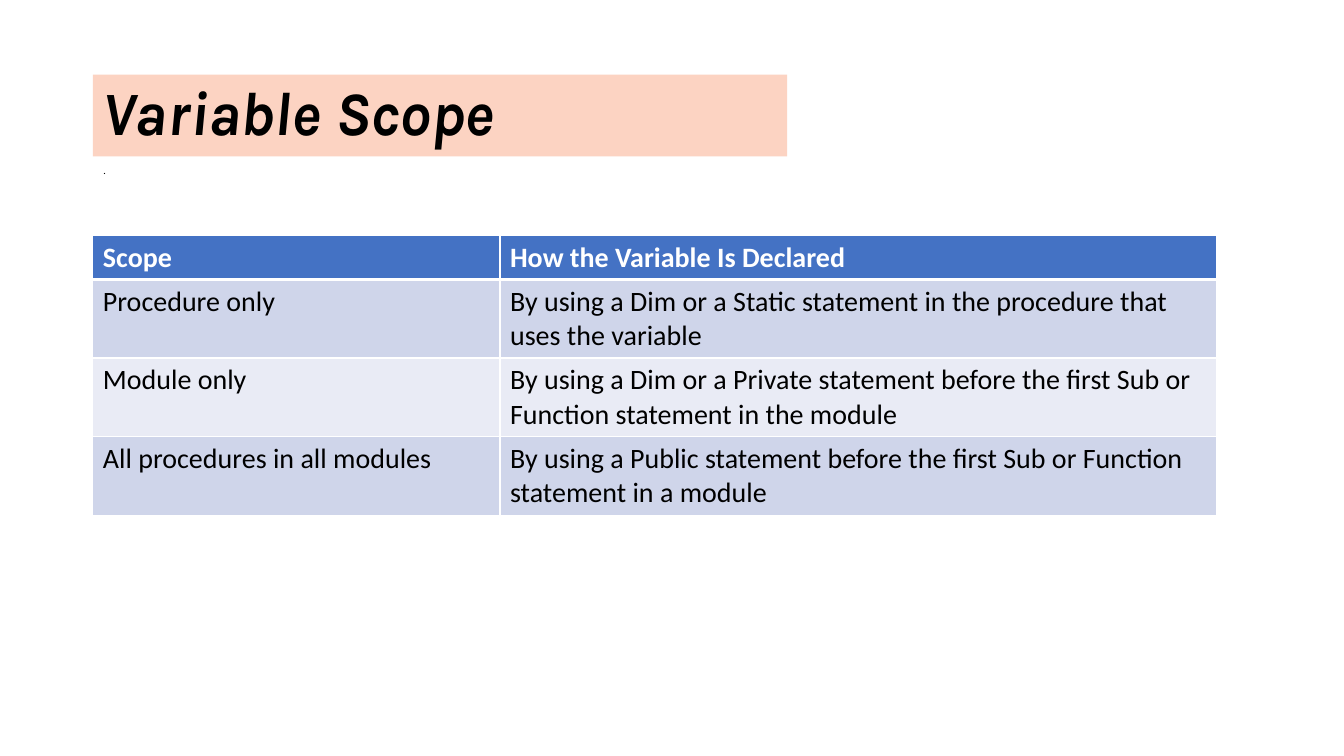
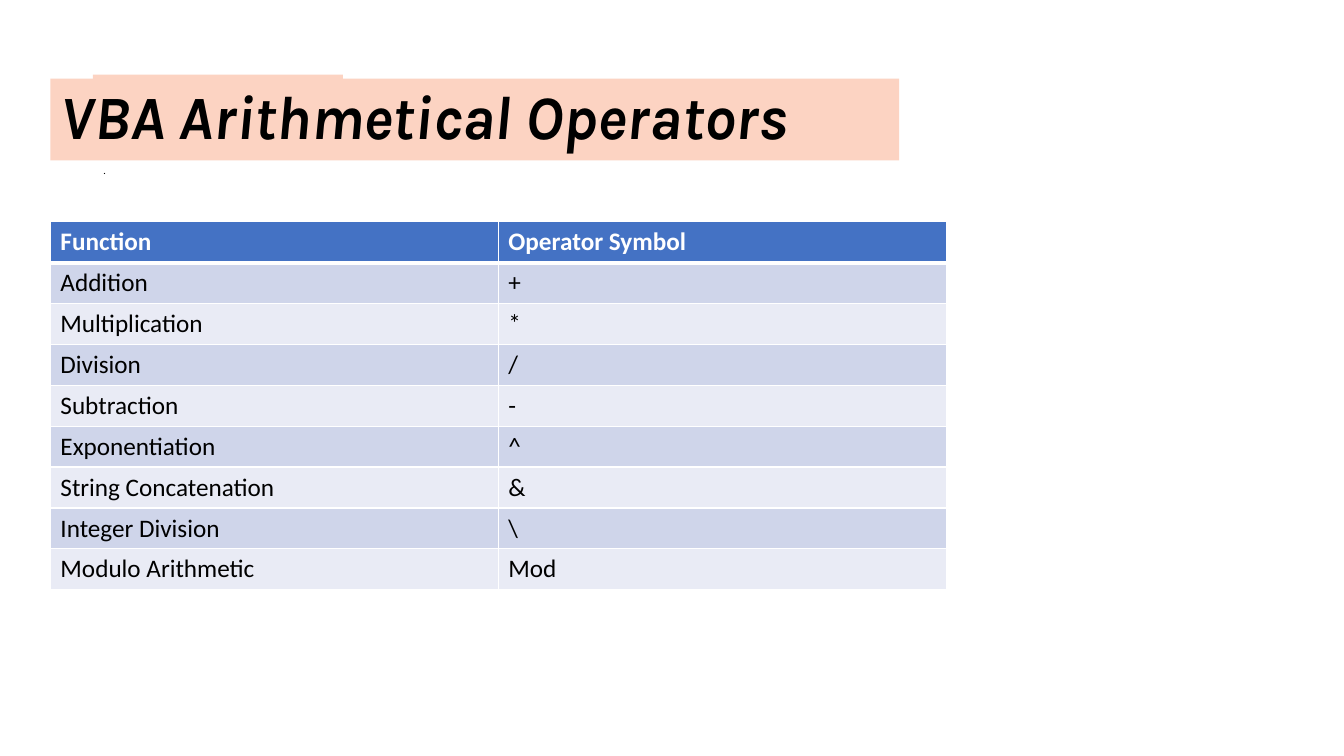
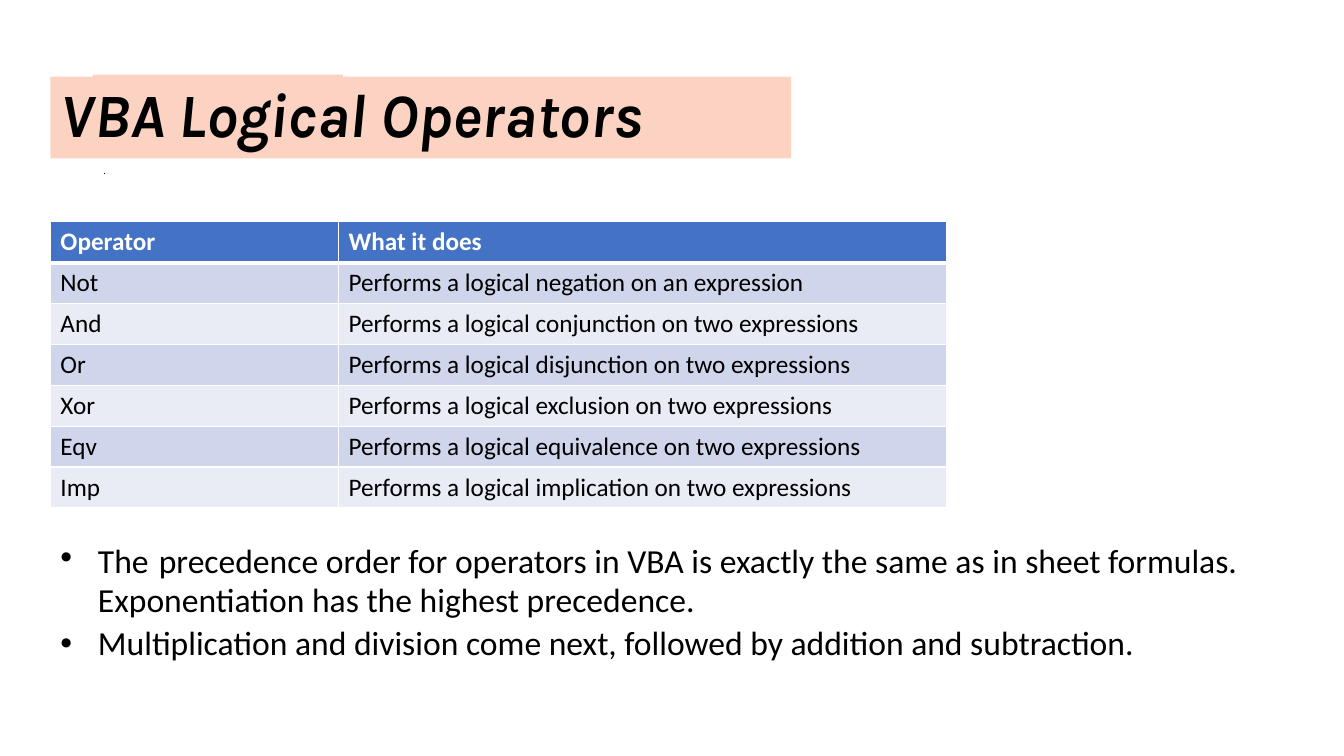
from dataclasses import dataclass

from lxml import etree
from pptx import Presentation
from pptx.dml.color import RGBColor
from pptx.enum.shapes import MSO_SHAPE
from pptx.enum.text import MSO_ANCHOR, MSO_AUTO_SIZE, PP_ALIGN
from pptx.oxml.ns import qn
from pptx.util import Cm, Pt

RECT = MSO_SHAPE.RECTANGLE
MIDDLE = MSO_ANCHOR.MIDDLE
LEFT = PP_ALIGN.LEFT
NO_FIT = MSO_AUTO_SIZE.NONE

# Shared look
PEACH, BLACK, WHITE = "FCD3C2", "000000", "FFFFFF"
BLUE, ODD, EVEN = "4472C4", "CFD5EA", "E9EBF5"
HEAD, BODY = "Karla", "Calibri"
EDGE, INNER = 1.27, 2.34  # left margins in cm


@dataclass
class Title:
    text: str
    left: float
    top: float
    width: float


@dataclass
class Grid:
    left: float
    top: float
    cols: tuple[float, ...]
    first: float  # header row height
    rest: float  # body row height
    size: int
    rows: list[tuple[str, str]]


@dataclass
class Page:
    title: Title
    grid: Grid
    tab: bool = True  # peach tab showing behind the title
    notes: tuple[tuple[str, ...], ...] = ()  # bullets, each a tuple of lines


PAGES = [
    Page(
        Title("Variable Scope", INNER, 1.88, 17.5),
        Grid(INNER, 5.94, (10.26, 18.06), 1.1, 1.98, 20, [
            ("Scope", "How the Variable Is Declared"),
            ("Procedure only",
             "By using a Dim or a Static statement in the procedure that uses the variable"),
            ("Module only",
             "By using a Dim or a Private statement before the first Sub or "
             "Function statement in the module"),
            ("All procedures in all modules",
             "By using a Public statement before the first Sub or Function statement in a module"),
        ]),
        tab=False,
    ),
    Page(
        Title("VBA Arithmetical Operators", EDGE, 1.98, 21.39),
        Grid(EDGE, 5.59, (11.29, 11.29), 1.03, 1.03, 18, [
            ("Function", "Operator Symbol"),
            ("Addition", "+"),
            ("Multiplication", "*"),
            ("Division", "/"),
            ("Subtraction", "-"),
            ("Exponentiation", "^"),
            ("String Concatenation", "&"),
            ("Integer Division", "\\"),
            ("Modulo Arithmetic", "Mod"),
        ]),
    ),
    Page(
        Title("VBA Logical Operators", EDGE, 1.93, 18.67),
        Grid(EDGE, 5.59, (7.26, 15.32), 1.03, 1.03, 18, [
            ("Operator", "What it does"),
            ("Not", "Performs a logical negation on an expression"),
            ("And", "Performs a logical conjunction on two expressions"),
            ("Or", "Performs a logical disjunction on two expressions"),
            ("Xor", "Performs a logical exclusion on two expressions"),
            ("Eqv", "Performs a logical equivalence on two expressions"),
            ("Imp", "Performs a logical implication on two expressions"),
        ]),
        notes=(
            ("The precedence order for operators in VBA is exactly the same as in sheet formulas.",
             "Exponentiation has the highest precedence."),
            ("Multiplication and division come next, followed by addition and subtraction.",),
        ),
    ),
]


def paint(fill, tone: str) -> None:
    fill.solid()
    fill.fore_color.rgb = RGBColor.from_string(tone)


def style(font, name: str, size: int, tone: str = BLACK,
          bold: bool = False, slant: bool = False) -> None:
    font.name, font.size, font.bold, font.italic = name, Pt(size), bold, slant
    font.color.rgb = RGBColor.from_string(tone)


def add_title(slide, spec_: Title) -> None:
    box = slide.shapes.title
    box.left, box.top = Cm(spec_.left), Cm(spec_.top)
    box.width, box.height = Cm(spec_.width), Cm(2.06)
    paint(box.fill, PEACH)
    frame = box.text_frame
    frame.text = spec_.text
    frame.auto_size, frame.vertical_anchor = NO_FIT, MIDDLE
    para = frame.paragraphs[0]
    para.alignment, para.line_spacing = LEFT, 0.9
    style(para.font, HEAD, 44, bold=True, slant=True)


def add_tab(slide) -> None:
    tab = slide.shapes.add_shape(RECT, Cm(INNER), Cm(1.88), Cm(6.3), Cm(1.75))
    tab.shadow.inherit = False
    paint(tab.fill, PEACH)
    tab.line.fill.background()
    slide.shapes.title._element.addprevious(tab._element)


def add_box(slide, left: float, top: float, width: float, height: float):
    box = slide.shapes.add_textbox(Cm(left), Cm(top), Cm(width), Cm(height))
    box.text_frame.word_wrap = True
    return box.text_frame


def add_dot(slide) -> None:
    para = add_box(slide, 2.36, 4.0, 29.2, 0.7).paragraphs[0]
    para.text = "."
    style(para.font, HEAD, 8)


def add_edges(cell, base: float) -> None:
    props = cell._tc.get_or_add_tcPr()
    for side, width in (("L", 1), ("R", 1), ("T", 1), ("B", base)):
        line = etree.SubElement(props, qn(f"a:ln{side}"), w=str(Pt(width)))
        fill = etree.SubElement(line, qn("a:solidFill"))
        etree.SubElement(fill, qn("a:srgbClr"), val=WHITE)


def add_grid(slide, grid: Grid) -> None:
    count = len(grid.rows)
    high = grid.first + grid.rest * (count - 1)
    table = slide.shapes.add_table(
        count, len(grid.cols), Cm(grid.left), Cm(grid.top),
        Cm(sum(grid.cols)), Cm(high)).table
    for col, width in zip(table.columns, grid.cols):
        col.width = Cm(width)
    for r, texts in enumerate(grid.rows):
        top = r == 0
        table.rows[r].height = Cm(grid.first if top else grid.rest)
        for c, text in enumerate(texts):
            cell = table.cell(r, c)
            cell.text = text
            # The header rule is thick, so the row below starts with it
            add_edges(cell, 3 if top else 1)
            if r == 1:
                cell._tc.tcPr.find(qn("a:lnT")).set("w", str(Pt(3)))
            paint(cell.fill, BLUE if top else ODD if r % 2 else EVEN)
            style(cell.text_frame.paragraphs[0].font, BODY, grid.size,
                  WHITE if top else BLACK, bold=top)


def add_notes(slide, notes: tuple[tuple[str, ...], ...]) -> None:
    frame = add_box(slide, EDGE, 13.36, 30.71, 3.76)
    for i, lines in enumerate(notes):
        para = frame.paragraphs[0] if i == 0 else frame.add_paragraph()
        props = para._p.get_or_add_pPr()
        props.set("marL", str(Cm(0.95)))
        props.set("indent", str(-Cm(0.95)))
        etree.SubElement(props, qn("a:buFont"), typeface="Arial")
        etree.SubElement(props, qn("a:buChar"), char="•")
        para.line_spacing = 0.9
        if i:
            para.space_before = Pt(5)
        style(para.font, BODY, 24)
        for n, line in enumerate(lines):
            if n:
                para.add_line_break()
            if i == n == 0:
                # The first word is set off by a larger space
                word, line = line.split(" ", 1)
                para.add_run().text = word
                gap = para.add_run()
                gap.text, gap.font.size = " ", Pt(32)
            para.add_run().text = line


def main() -> None:
    deck = Presentation()
    deck.slide_width, deck.slide_height = Cm(33.87), Cm(19.05)
    for page in PAGES:
        slide = deck.slides.add_slide(deck.slide_layouts[5])
        add_title(slide, page.title)
        if page.tab:
            add_tab(slide)
        add_dot(slide)
        if page.notes:
            add_notes(slide, page.notes)
        add_grid(slide, page.grid)
    deck.save("out.pptx")


if __name__ == "__main__":
    main()
